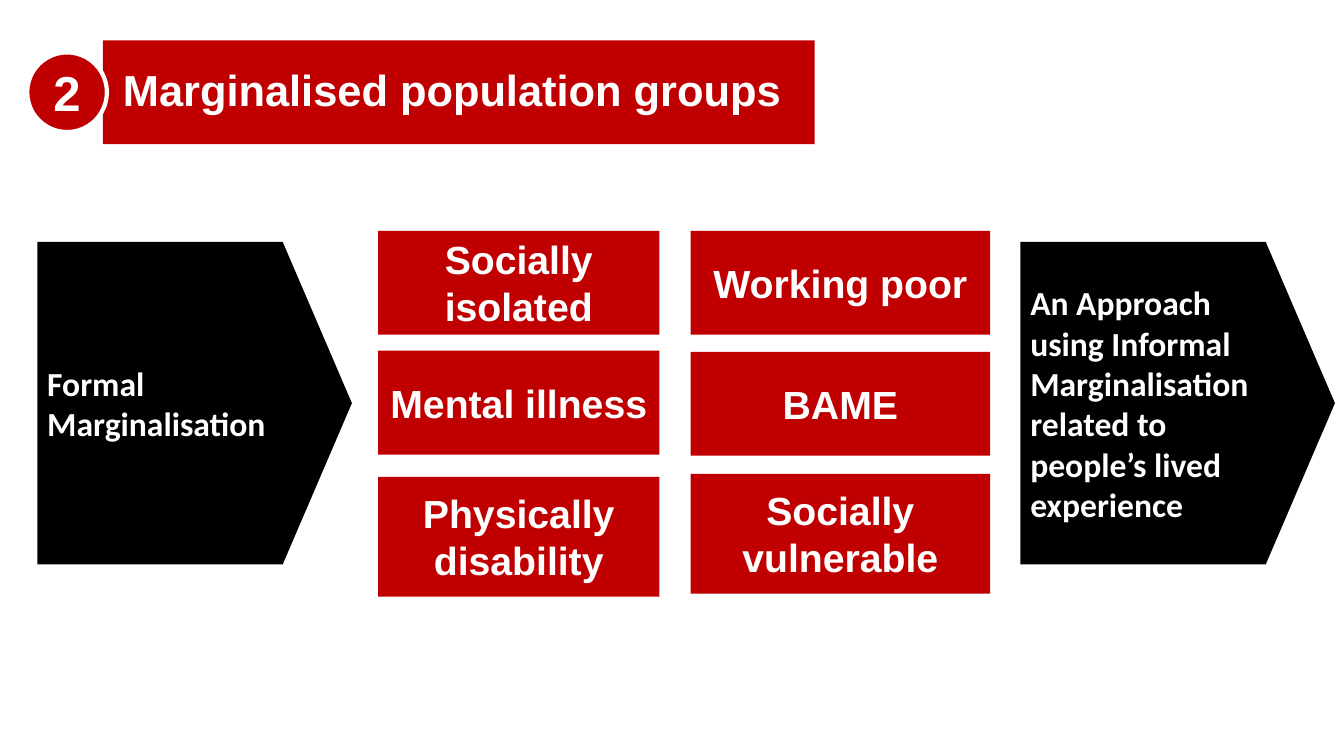
import pptx
import pptx.util
import pptx.dml.color
import pptx.enum.shapes
import pptx.enum.text

Inches = pptx.util.Inches
Pt = pptx.util.Pt
Kind = pptx.enum.shapes.MSO_SHAPE
Align = pptx.enum.text.PP_ALIGN

RED = pptx.dml.color.RGBColor(0xC0, 0x00, 0x00)
BLACK = pptx.dml.color.RGBColor(0x00, 0x00, 0x00)
WHITE = pptx.dml.color.RGBColor(0xFF, 0xFF, 0xFF)


def write(shape, text, *, size, font="Arial", align=Align.CENTER, inset=0.1,
          line_spacing=None, space_after=None):
    frame = shape.text_frame
    frame.word_wrap = True
    frame.vertical_anchor = pptx.enum.text.MSO_ANCHOR.MIDDLE
    frame.margin_left = frame.margin_right = Inches(inset)
    frame.margin_top = frame.margin_bottom = Inches(0.05)
    para = frame.paragraphs[0]
    para.alignment = align
    para.line_spacing = line_spacing
    para.space_after = space_after
    span = para.add_run()
    span.text = text
    span.font.name = font
    span.font.size = Pt(size)
    span.font.bold = True
    span.font.color.rgb = WHITE


class MarginalisationSlide:
    def __init__(self, page):
        self.shapes = page.shapes

    def solid(self, kind, left, top, width, height, fill, holder=None):
        shape = (holder or self.shapes).add_shape(
            kind, Inches(left), Inches(top), Inches(width), Inches(height))
        shape.shadow.inherit = False
        shape.fill.solid()
        shape.fill.fore_color.rgb = fill
        shape.line.fill.background()
        return shape

    def arrow(self, left, text):
        shape = self.solid(Kind.PENTAGON, left, 2.4, 3.12, 3.2, BLACK)
        shape.adjustments[0] = 0.22
        write(shape, text, size=24, font="Calibri", align=Align.LEFT)

    def heading(self, number, text):
        banner = self.solid(Kind.RECTANGLE, 1.02, 0.4, 7.06, 1.03, RED)
        write(banner, text, size=31, align=Align.LEFT, inset=0.2,
              line_spacing=0.9, space_after=Pt(6))
        badge = self.solid(Kind.OVAL, 0.27, 0.52, 0.79, 0.79, RED)
        badge.line.color.rgb = WHITE
        badge.line.width = Pt(3)
        write(badge, number, size=35)

    def group_column(self, holder, left, width, boxes):
        for text, top, height in boxes:
            box = self.solid(Kind.RECTANGLE, left, top, width, height, RED, holder)
            write(box, text, size=28)


def main():
    deck = pptx.Presentation()
    deck.slide_width = Inches(13.33)
    deck.slide_height = Inches(7.5)
    page = deck.slides.add_slide(deck.slide_layouts[6])
    slide = MarginalisationSlide(page)

    slide.arrow(10.12, "An Approach using Informal Marginalisation "
                       "related to people’s lived experience")
    slide.heading("2", "Marginalised population groups")
    holder = page.shapes.add_group_shape().shapes
    slide.group_column(holder, 3.75, 2.79, [
        ("Socially isolated", 2.29, 1.03),
        ("Mental illness", 3.48, 1.03),
        ("Physically disability", 4.73, 1.19),
    ])
    slide.group_column(holder, 6.85, 2.97, [
        ("Working poor", 2.29, 1.03),
        ("BAME", 3.49, 1.03),
        ("Socially vulnerable", 4.7, 1.19),
    ])
    slide.arrow(0.37, "Formal Marginalisation")

    deck.save("out.pptx")


if __name__ == "__main__":
    main()
